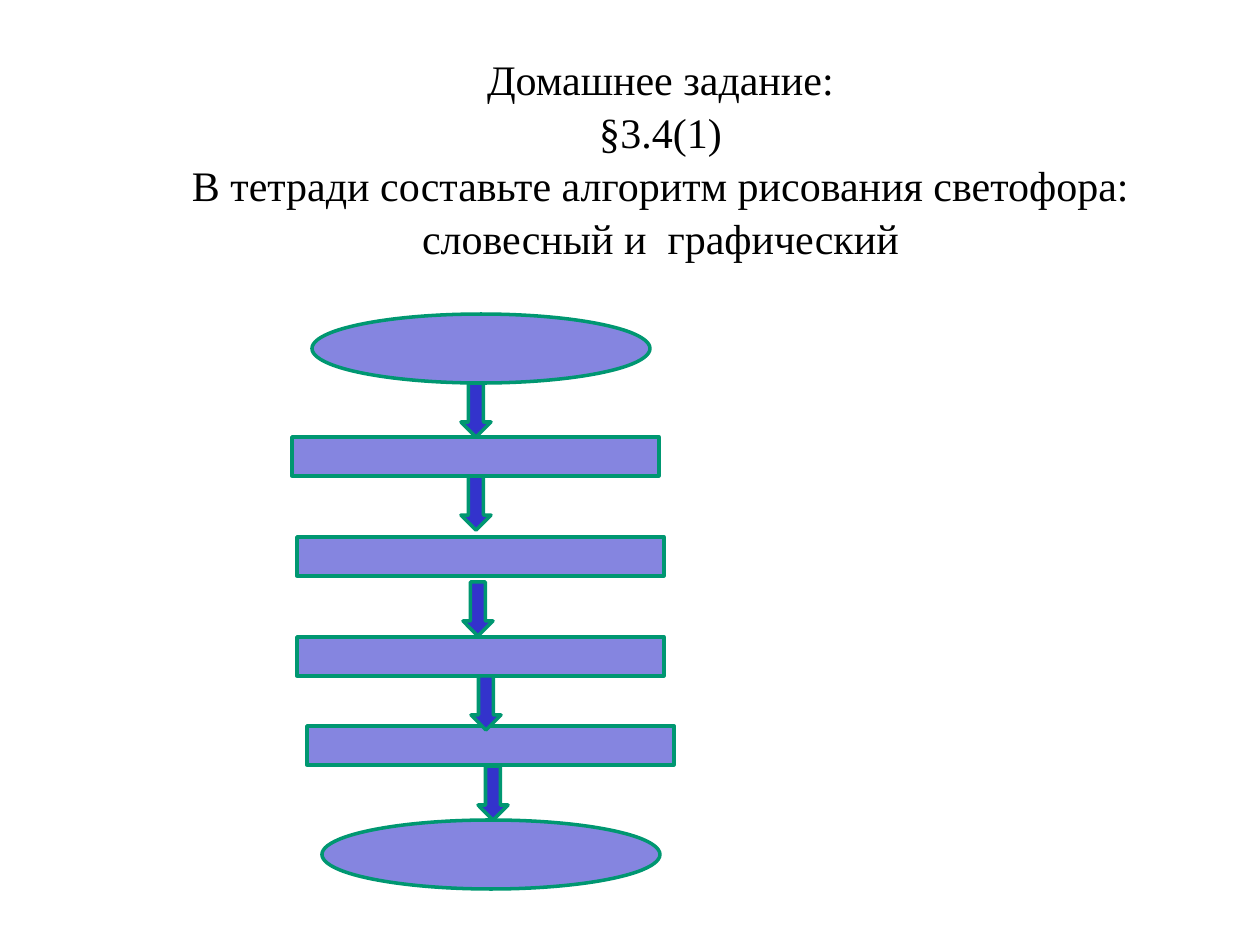
from pptx import Presentation
from pptx.dml.color import RGBColor
from pptx.enum.shapes import MSO_SHAPE
from pptx.enum.text import MSO_ANCHOR, MSO_AUTO_SIZE, PP_ALIGN
from pptx.util import Emu, Pt

BLACK = RGBColor(0x00, 0x00, 0x00)
WHITE = RGBColor(0xFF, 0xFF, 0xFF)
LAVENDER = RGBColor(0x85, 0x85, 0xE0)
BLUE = RGBColor(0x33, 0x33, 0xCC)
GREEN = RGBColor(0x00, 0x97, 0x71)


def px(length):
    return Emu(round(length * 914400 / 126))


presentation = Presentation()
presentation.slide_width = px(1260)
presentation.slide_height = px(945)
slide = presentation.slides.add_slide(presentation.slide_layouts[5])
slide.background.fill.solid()
slide.background.fill.fore_color.rgb = WHITE

title = slide.shapes.title
title.left, title.top, title.width, title.height = px(174), px(45), px(973), px(217)
text_frame = title.text_frame
text_frame.word_wrap = True
text_frame.auto_size = MSO_AUTO_SIZE.SHAPE_TO_FIT_TEXT
text_frame.vertical_anchor = MSO_ANCHOR.TOP
homework = [
    "Домашнее задание:",
    "§3.4(1)",
    "В тетради составьте алгоритм рисования светофора: словесный и  графический",
]
for index, line in enumerate(homework):
    paragraph = text_frame.paragraphs[0] if index == 0 else text_frame.add_paragraph()
    paragraph.alignment = PP_ALIGN.CENTER
    paragraph.line_spacing = 1.05
    run = paragraph.add_run()
    run.text = line
    run.font.name = "Times New Roman"
    run.font.size = Pt(24)
    run.font.color.rgb = BLACK

flowchart = [
    (MSO_SHAPE.OVAL, 338, 69, LAVENDER, [(312, 314), (322, 820)]),
    (MSO_SHAPE.RECTANGLE, 367, 39, LAVENDER,
     [(292, 437), (297, 537), (297, 637), (307, 726)]),
    (MSO_SHAPE.DOWN_ARROW, 30, 54, BLUE,
     [(461, 383), (461, 476), (463, 582), (478, 766), (471, 676)]),
]
for kind, width, height, color, positions in flowchart:
    for left, top in positions:
        shape = slide.shapes.add_shape(kind, px(left), px(top), px(width), px(height))
        shape.shadow.inherit = False
        shape.fill.solid()
        shape.fill.fore_color.rgb = color
        shape.line.color.rgb = GREEN
        shape.line.width = Pt(2)

presentation.save("out.pptx")
